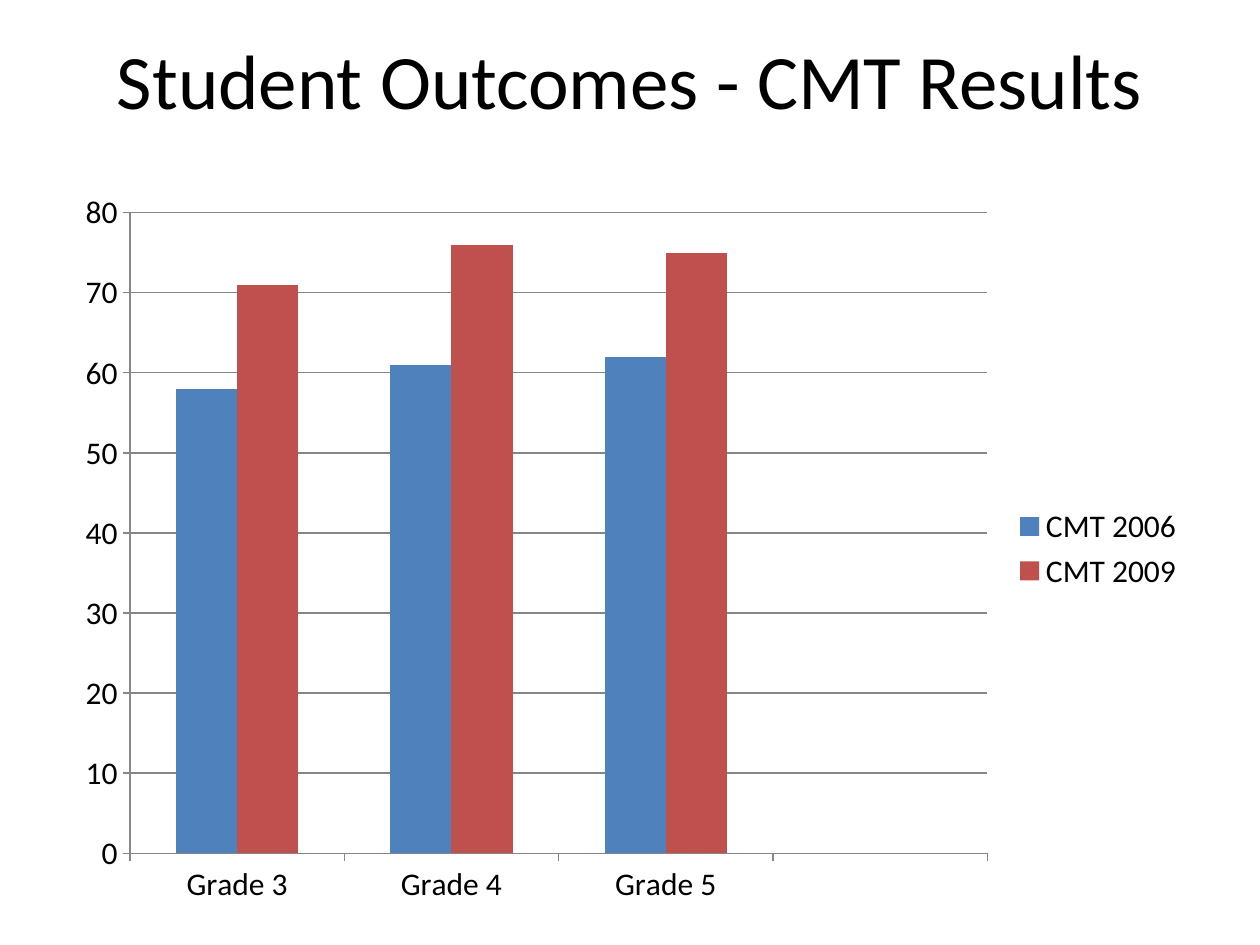
"""Build a slide that compares CMT results by grade in a column chart."""
import pptx
import pptx.chart.data
import pptx.dml.color
import pptx.enum.chart
import pptx.enum.text
import pptx.util

Inches = pptx.util.Inches
RGBColor = pptx.dml.color.RGBColor

BLACK = RGBColor(0x00, 0x00, 0x00)
GRAY = RGBColor(0x86, 0x86, 0x86)
BLUE = RGBColor(0x4F, 0x81, 0xBD)
RED = RGBColor(0xC0, 0x50, 0x4D)
FONT = "Calibri"

GRADES = ["Grade 3", "Grade 4", "Grade 5", ""]
RESULTS = [
    ("CMT 2006", [58, 61, 62, None], BLUE),
    ("CMT 2009", [71, 76, 75, None], RED),
]


def set_font(font, size):
    """Apply the slide's typeface and text colour at a point size."""
    font.name = FONT
    font.size = pptx.util.Pt(size)
    font.color.rgb = BLACK


def set_line(line):
    """Draw a chart line thin and gray."""
    line.color.rgb = GRAY
    line.width = pptx.util.Pt(0.75)


def add_title(page, text):
    """Place and format the title placeholder."""
    title = page.shapes.title
    title.left, title.top = Inches(0.5), Inches(0)
    title.width, title.height = Inches(9), Inches(1.25)
    title.text_frame.text = text
    title.text_frame.vertical_anchor = pptx.enum.text.MSO_ANCHOR.MIDDLE
    para = title.text_frame.paragraphs[0]
    para.alignment = pptx.enum.text.PP_ALIGN.CENTER
    set_font(para.font, 44)


def format_axes(chart):
    """Set ticks, lines, scale and gridlines of both axes."""
    for axis in (chart.category_axis, chart.value_axis):
        axis.major_tick_mark = pptx.enum.chart.XL_TICK_MARK.OUTSIDE
        axis.minor_tick_mark = pptx.enum.chart.XL_TICK_MARK.NONE
        set_line(axis.format.line)
    scale = chart.value_axis
    scale.minimum_scale, scale.maximum_scale, scale.major_unit = 0, 80, 10
    scale.has_major_gridlines = True
    set_line(scale.major_gridlines.format.line)


def add_results_chart(page):
    """Add the clustered columns with their legend."""
    data = pptx.chart.data.CategoryChartData()
    data.categories = GRADES
    for name, values, _ in RESULTS:
        data.add_series(name, values)
    chart = page.shapes.add_chart(
        pptx.enum.chart.XL_CHART_TYPE.COLUMN_CLUSTERED,
        Inches(0.5), Inches(1.42), Inches(9), Inches(5.87), data,
    ).chart
    set_font(chart.font, 18)
    chart.has_title = False
    chart.has_legend = True
    chart.legend.position = pptx.enum.chart.XL_LEGEND_POSITION.RIGHT
    chart.legend.include_in_layout = False
    format_axes(chart)
    plot = chart.plots[0]
    plot.gap_width, plot.overlap = 150, 0
    plot.vary_by_categories = False
    for series, (_, _, color) in zip(plot.series, RESULTS):
        series.format.fill.solid()
        series.format.fill.fore_color.rgb = color


def main():
    """Build and save the deck."""
    deck = pptx.Presentation()
    deck.slide_width, deck.slide_height = Inches(10), Inches(7.5)
    page = deck.slides.add_slide(deck.slide_layouts.get_by_name("Title Only"))
    add_title(page, "Student Outcomes - CMT Results")
    add_results_chart(page)
    deck.save("out.pptx")


if __name__ == "__main__":
    main()
